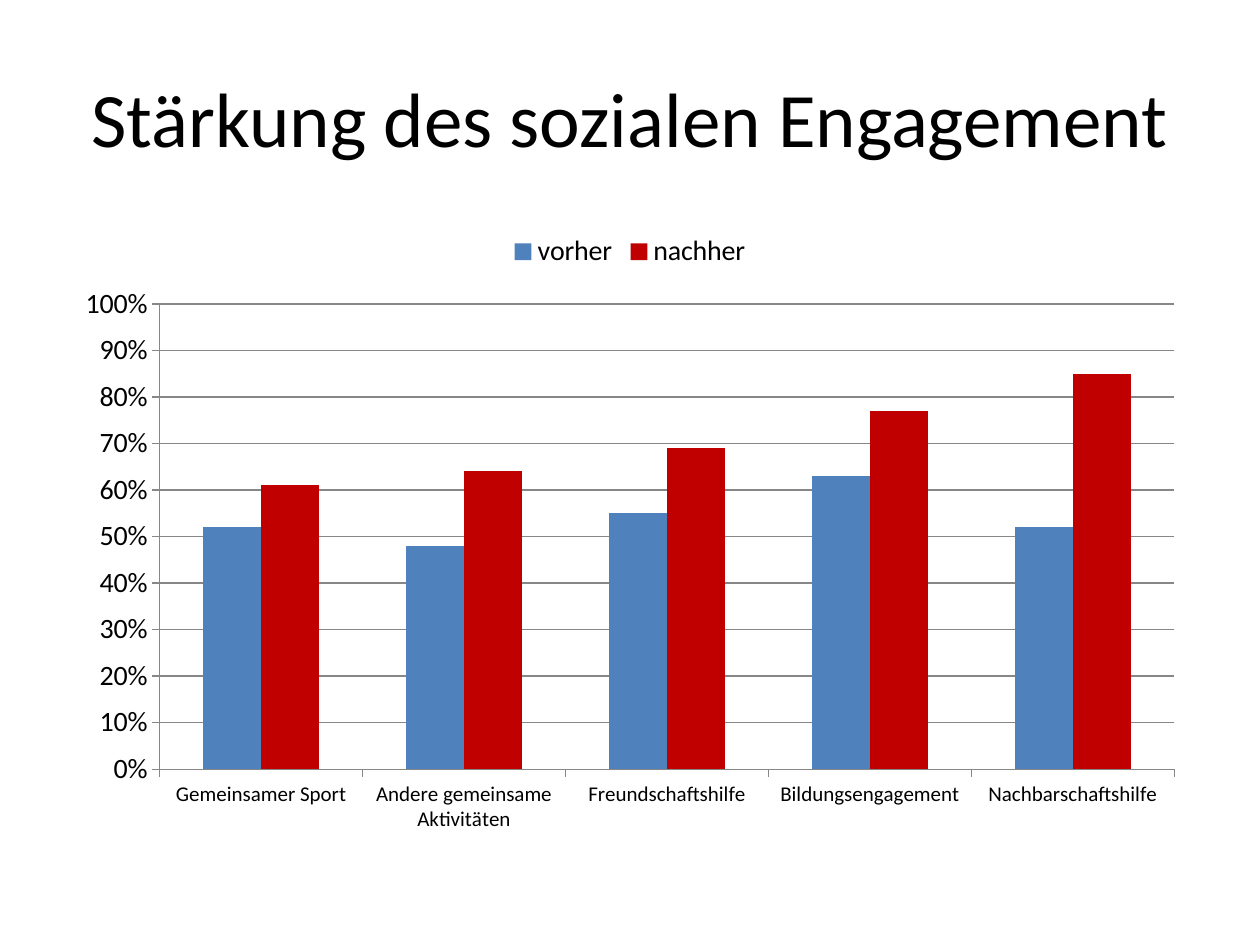
from pptx import Presentation
from pptx.chart.data import CategoryChartData
from pptx.dml.color import RGBColor
from pptx.enum.chart import XL_CHART_TYPE, XL_LEGEND_POSITION, XL_TICK_MARK
from pptx.enum.text import MSO_ANCHOR, PP_ALIGN
from pptx.util import Emu, Pt

PX = 914400 / 126
FONT = "Calibri"
COLORS = {"text": "000000", "grid": "878787", "vorher": "4F81BD", "nachher": "C00000"}


def px(*lengths):
    return [Emu(round(length * PX)) for length in lengths]


def style_font(font, size):
    for name, value in {"name": FONT, "size": Pt(size), "bold": False}.items():
        setattr(font, name, value)
    font.color.rgb = RGBColor.from_string(COLORS["text"])


presentation = Presentation()
presentation.slide_width, presentation.slide_height = px(1260, 945)
slide = presentation.slides.add_slide(presentation.slide_layouts[6])

# Heading
heading = slide.shapes.add_textbox(*px(63, 38, 1134, 157)).text_frame
heading.word_wrap = True
heading.vertical_anchor = MSO_ANCHOR.MIDDLE
heading_line = heading.paragraphs[0]
heading_line.text = "Stärkung des sozialen Engagement"
heading_line.alignment = PP_ALIGN.CENTER
style_font(heading_line.runs[0].font, 44)

# Engagement before and after
engagement = CategoryChartData(number_format="0%")
engagement.categories = [
    "Gemeinsamer Sport",
    "Andere gemeinsame Aktivitäten",
    "Freundschaftshilfe",
    "Bildungsengagement",
    "Nachbarschaftshilfe",
]
engagement.add_series("vorher", [0.52, 0.48, 0.55, 0.63, 0.52])
engagement.add_series("nachher", [0.61, 0.64, 0.69, 0.77, 0.85])
chart = slide.shapes.add_chart(
    XL_CHART_TYPE.COLUMN_CLUSTERED, *px(63, 220, 1134, 624), engagement
).chart
chart.has_title = False
style_font(chart.font, 18)

# Columns
columns = chart.plots[0]
for name, value in {"gap_width": 150, "overlap": 0, "vary_by_categories": False}.items():
    setattr(columns, name, value)
for series in columns.series:
    series.format.fill.solid()
    series.format.fill.fore_color.rgb = RGBColor.from_string(COLORS[series.name])

# Legend
chart.has_legend = True
chart.legend.position = XL_LEGEND_POSITION.TOP
chart.legend.include_in_layout = False
style_font(chart.legend.font, 16)

# Axes and gridlines
percent_axis = chart.value_axis
percent_format = {
    "minimum_scale": 0,
    "maximum_scale": 1,
    "major_unit": 0.1,
    "has_major_gridlines": True,
}
for name, value in percent_format.items():
    setattr(percent_axis, name, value)
percent_axis.tick_labels.number_format = "0%"
percent_axis.tick_labels.number_format_is_linked = False

for axis, size in ((chart.category_axis, 12), (percent_axis, 16)):
    axis.major_tick_mark = XL_TICK_MARK.OUTSIDE
    axis.minor_tick_mark = XL_TICK_MARK.NONE
    style_font(axis.tick_labels.font, size)
for ruled in (chart.category_axis, percent_axis, percent_axis.major_gridlines):
    ruled.format.line.width = Pt(0.75)
    ruled.format.line.color.rgb = RGBColor.from_string(COLORS["grid"])

presentation.save("out.pptx")
